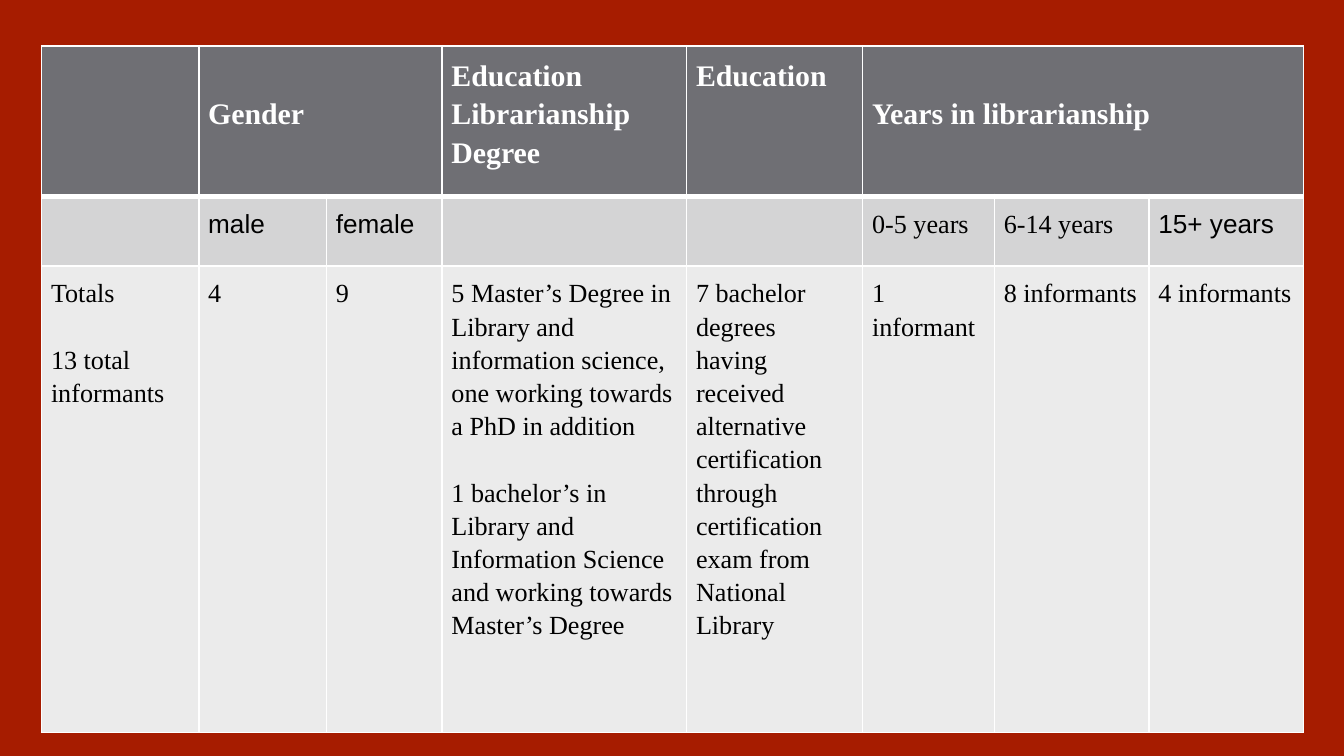
from lxml import etree
from pptx import Presentation
from pptx import util as u
from pptx.dml.color import RGBColor
from pptx.enum import text
from pptx.oxml import ns

COLORS = {
    "background": "A61C00",
    "header": "6F6F74",
    "subheader": "D4D4D5",
    "body": "EBEBEB",
    "border": "FFFFFF",
    "header_text": "FFFFFF",
    "body_text": "000000",
}
SERIF, SANS = "Times New Roman", "Arial"
COL_WIDTHS = [1.17, 0.95, 0.86, 1.82, 1.31, 0.98, 1.15, 1.15]
ROW_HEIGHTS = [1.12, 0.52, 3.47]
ROW_FILLS = ["header", "subheader", "body"]
PADDING = 0.07
LINE_SPACING = 1.15
HEADER_LINE = 0.28  # height of one header line
BODY_LINE = 17.8    # height of one body line, in points

# Each cell is a list of paragraphs.
ROWS = [
    [[], ["Gender"], [], ["Education", "Librarianship Degree"], ["Education"],
     ["Years in librarianship"], [], []],
    [[], ["male"], ["female"], [], [], ["0-5 years"], ["6-14 years"], ["15+ years"]],
    [["Totals", "13 total informants"], ["4"], ["9"],
     ["5 Master’s Degree in Library and information science, "
      "one working towards a PhD in addition",
      "1 bachelor’s in Library and Information Science "
      "and working towards Master’s Degree"],
     ["7 bachelor degrees having received alternative certification "
      "through certification exam from National Library"],
     ["1 informant"], ["8 informants"], ["4 informants"]],
]
HEADER_SPANS = [(1, 2), (5, 7)]  # first and last column of each merged heading
SANS_CELLS = {"male", "female", "15+ years"}


def rgb(name):
    return RGBColor.from_string(COLORS[name])


def set_borders(cell, top, bottom):
    """Draw all four cell edges; top and bottom are widths in points."""
    tc_pr = cell._tc.get_or_add_tcPr()
    for side, width in (("L", 1), ("R", 1), ("T", top), ("B", bottom)):
        ln = etree.SubElement(tc_pr, ns.qn(f"a:ln{side}"), w=str(u.Pt(width)))
        fill = etree.SubElement(ln, ns.qn("a:solidFill"))
        etree.SubElement(fill, ns.qn("a:srgbClr"), val=COLORS["border"])


def write_cell(cell, paragraphs, is_header):
    tf = cell.text_frame
    for i, line in enumerate(paragraphs):
        p = tf.paragraphs[0] if i == 0 else tf.add_paragraph()
        p.text = line
        p.line_spacing = LINE_SPACING
        if i and not is_header:
            p.space_before = u.Pt(BODY_LINE)
        p.font.name = SANS if line in SANS_CELLS else SERIF
        p.font.size = u.Pt(16 if is_header else 14)
        p.font.bold = is_header
        p.font.color.rgb = rgb("header_text" if is_header else "body_text")


def add_informant_table(s, left, top):
    frame = s.shapes.add_table(
        len(ROWS), len(COL_WIDTHS), u.Inches(left), u.Inches(top),
        u.Inches(sum(COL_WIDTHS)), u.Inches(sum(ROW_HEIGHTS)))
    table = frame.table
    for column, width in zip(table.columns, COL_WIDTHS):
        column.width = u.Inches(width)
    for row, height in zip(table.rows, ROW_HEIGHTS):
        row.height = u.Inches(height)

    for r, row in enumerate(ROWS):
        for c, paragraphs in enumerate(row):
            cell = table.cell(r, c)
            set_borders(cell, top=3 if r == 1 else 1, bottom=3 if r == 0 else 1)
            cell.fill.solid()
            cell.fill.fore_color.rgb = rgb(ROW_FILLS[r])
            cell.margin_left = cell.margin_right = u.Inches(PADDING)
            cell.margin_top = cell.margin_bottom = u.Inches(PADDING)
            cell.vertical_anchor = text.MSO_ANCHOR.TOP
            write_cell(cell, paragraphs, is_header=r == 0)

    for first, last in HEADER_SPANS:
        heading = table.cell(0, first)
        heading.merge(table.cell(0, last))
        heading.margin_top = u.Inches(PADDING + HEADER_LINE)


def main():
    prs = Presentation()
    prs.slide_width = u.Inches(10)
    prs.slide_height = prs.slide_width * 9 // 16
    s = prs.slides.add_slide(prs.slide_layouts[6])
    s.background.fill.solid()
    s.background.fill.fore_color.rgb = rgb("background")
    add_informant_table(s, 0.31, 0.34)
    prs.save("out.pptx")


if __name__ == "__main__":
    main()
